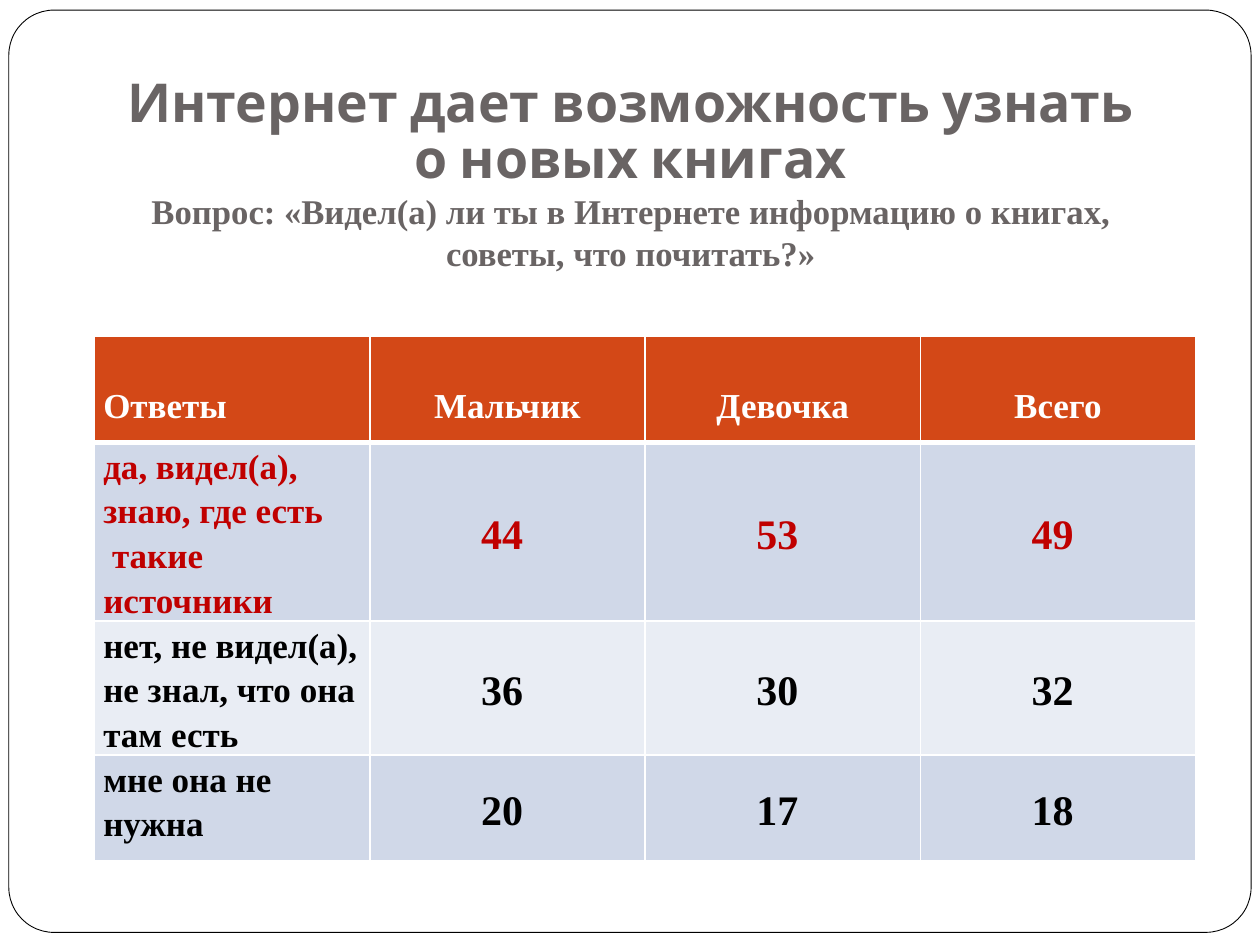
from lxml import etree
from pptx import Presentation
from pptx.dml.color import RGBColor
from pptx.enum.shapes import MSO_SHAPE
from pptx.enum.text import MSO_ANCHOR, MSO_AUTO_SIZE, PP_ALIGN
from pptx.oxml.ns import qn
from pptx.util import Inches, Pt

ROUNDED = MSO_SHAPE.ROUNDED_RECTANGLE
TOP, MIDDLE, BOTTOM = MSO_ANCHOR.TOP, MSO_ANCHOR.MIDDLE, MSO_ANCHOR.BOTTOM
LEFT, CENTER = PP_ALIGN.LEFT, PP_ALIGN.CENTER

WHITE = RGBColor(0xFF, 0xFF, 0xFF)
BLACK = RGBColor(0, 0, 0)
GRAY = RGBColor(0x69, 0x64, 0x64)
RED = RGBColor(0xC0, 0, 0)
ORANGE = RGBColor(0xD3, 0x48, 0x17)
BAND_DARK = RGBColor(0xD0, 0xD8, 0xE8)
BAND_LIGHT = RGBColor(0xE9, 0xED, 0xF4)

HEADING_FONT = "Cabin"
BODY_FONT = "Times New Roman"

HEADING = "Интернет дает возможность узнать\vо новых книгах"
QUESTION = "Вопрос: «Видел(а) ли ты в Интернете информацию о книгах,\vсоветы, что почитать?»"

# Row text, text colour, fill and height in inches
HEADER = ["Ответы", "Мальчик", "Девочка", "Всего"]
ANSWERS = [
    (["да, видел(а), знаю, где есть\n такие источники", "44 ", "53 ", "49 "], RED, BAND_DARK, 1.42),
    (["нет, не видел(а),\nне знал, что она там есть", "36 ", "30 ", "32 "], BLACK, BAND_LIGHT, 1.06),
    (["мне она не нужна", "20 ", "17 ", "18 "], BLACK, BAND_DARK, 0.84),
]
HEADER_HEIGHT = 0.84


def format_runs(paragraph, font_name, size, color):
    for run in paragraph.runs:
        run.font.name = font_name
        run.font.size = Pt(size)
        run.font.bold = True
        run.font.color.rgb = color


def add_frame(slide):
    """Add the rounded page border behind everything else."""
    frame = slide.shapes.add_shape(ROUNDED, Inches(0.07), Inches(0.08), Inches(9.86), Inches(7.32))
    frame.adjustments[0] = 0.049
    frame.shadow.inherit = False
    frame.fill.solid()
    frame.fill.fore_color.rgb = WHITE
    frame.line.color.rgb = BLACK
    frame.line.width = Pt(0.5)
    slide.shapes._spTree.insert(2, frame._element)


def set_title(slide):
    title = slide.shapes.title
    title.left, title.top = Inches(0.51), Inches(0.44)
    title.width, title.height = Inches(8.99), Inches(2.83)
    text_frame = title.text_frame
    text_frame.text = f"{HEADING}\n{QUESTION}"
    text_frame.word_wrap = True
    text_frame.auto_size = MSO_AUTO_SIZE.NONE
    text_frame.vertical_anchor = BOTTOM
    text_frame.margin_bottom = Inches(1.1)
    styles = [(HEADING_FONT, 30.6, 0.88), (BODY_FONT, 19.8, 1.0)]
    for paragraph, (font_name, size, spacing) in zip(text_frame.paragraphs, styles):
        paragraph.alignment = CENTER
        paragraph.line_spacing = spacing
        paragraph.space_before = Pt(0)
        format_runs(paragraph, font_name, size, GRAY)


def set_borders(cell, top, bottom):
    """Draw white cell borders; top and bottom are widths in points."""
    properties = cell._tc.get_or_add_tcPr()
    widths = {"a:lnL": 1, "a:lnR": 1, "a:lnT": top, "a:lnB": bottom}
    for position, (tag, width) in enumerate(widths.items()):
        line = etree.Element(qn(tag), w=str(Pt(width)))
        fill = etree.SubElement(line, qn("a:solidFill"))
        etree.SubElement(fill, qn("a:srgbClr"), val=str(WHITE))
        properties.insert(position, line)


def fill_cell(cell, text, size, color, fill, alignment, anchor):
    cell.text_frame.text = text
    cell.vertical_anchor = anchor
    cell.margin_left = cell.margin_right = Inches(0.07)
    cell.margin_top = cell.margin_bottom = 0
    cell.fill.solid()
    cell.fill.fore_color.rgb = fill
    for paragraph in cell.text_frame.paragraphs:
        paragraph.alignment = alignment
        paragraph.line_spacing = 1.15
        format_runs(paragraph, BODY_FONT, size, color)


def add_answer_table(slide):
    heights = [HEADER_HEIGHT] + [answer[3] for answer in ANSWERS]
    table = slide.shapes.add_table(
        len(heights), len(HEADER), Inches(0.75), Inches(2.67), Inches(8.74), Inches(sum(heights))
    ).table
    for row, height in zip(table.rows, heights):
        row.height = Inches(height)

    for column, text in enumerate(HEADER):
        cell = table.cell(0, column)
        fill_cell(cell, text, 20, WHITE, ORANGE, CENTER if column else LEFT, TOP)
        cell.margin_top = Inches(0.36)
        set_borders(cell, 1, 3)

    for row, (texts, color, fill, _) in enumerate(ANSWERS, start=1):
        for column, text in enumerate(texts):
            cell = table.cell(row, column)
            if column:
                fill_cell(cell, text, 24, color, fill, CENTER, MIDDLE)
            else:
                fill_cell(cell, text, 20, color, fill, LEFT, TOP)
            set_borders(cell, 3 if row == 1 else 1, 1)


def main():
    presentation = Presentation()
    presentation.slide_width = Inches(10)
    presentation.slide_height = Inches(7.5)
    slide = presentation.slides.add_slide(presentation.slide_layouts[5])
    add_frame(slide)
    set_title(slide)
    add_answer_table(slide)
    presentation.save("out.pptx")


if __name__ == "__main__":
    main()
